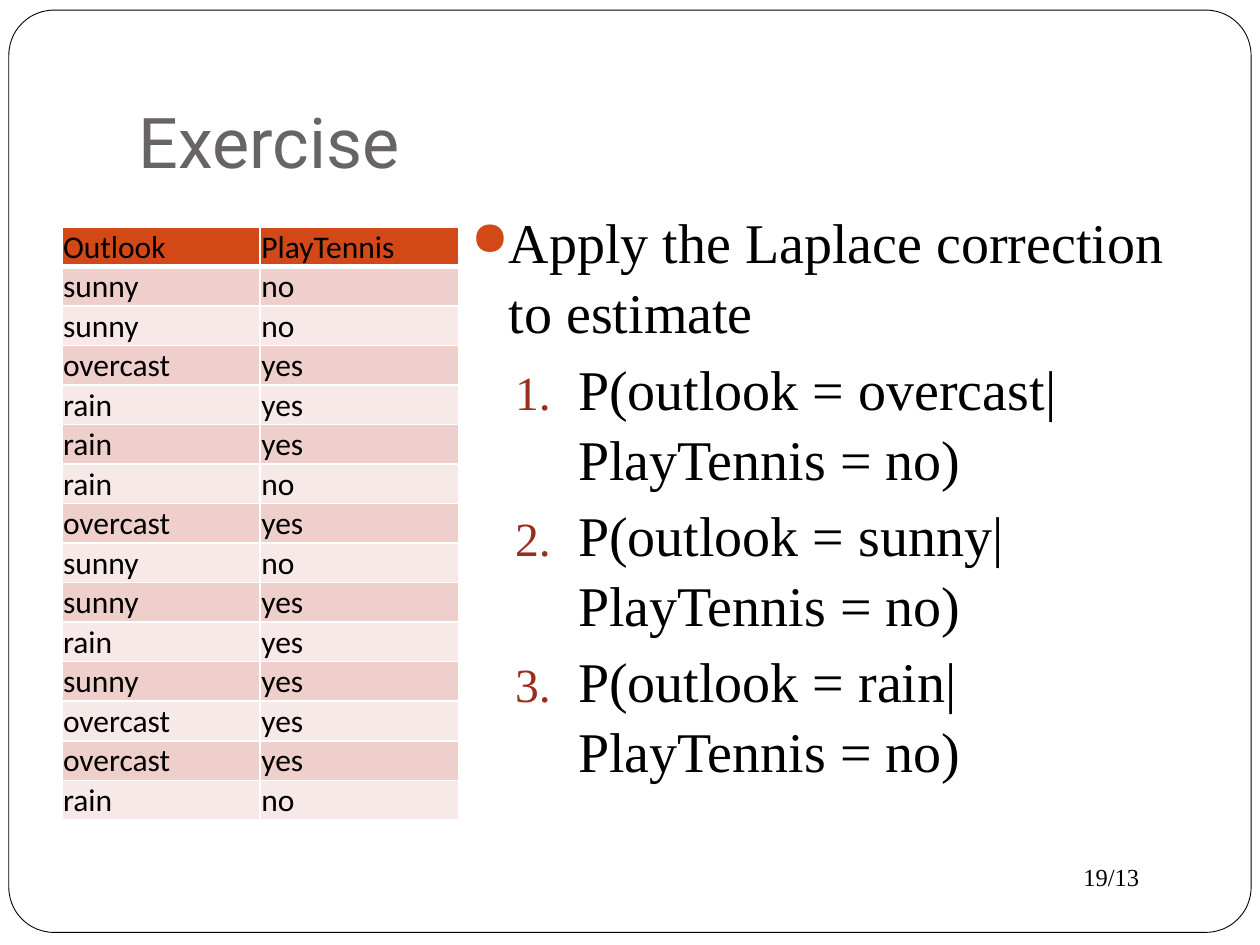
from pptx import Presentation
from pptx.dml.color import RGBColor
from pptx.enum.shapes import MSO_SHAPE
from pptx.enum.text import MSO_ANCHOR, MSO_AUTO_SIZE, PP_ALIGN
from pptx.oxml.ns import qn
from pptx.util import Inches, Pt
from lxml.etree import SubElement

BLACK = RGBColor(0, 0, 0)
WHITE = RGBColor(255, 255, 255)
GRAY = RGBColor(0x69, 0x64, 0x64)
ORANGE = RGBColor(0xD3, 0x48, 0x17)
RED = RGBColor(0x9B, 0x2D, 0x1F)
BANDS = RGBColor(0xF7, 0xE9, 0xE8), RGBColor(0xEF, 0xCF, 0xCC)
SERIF = "Times New Roman"

TITLE = "Exercise"
PAGE_NUMBER = "19/13"
TASK = "Apply the Laplace correction to estimate"
ESTIMATES = [f"P(outlook = {outlook}| PlayTennis = no)" for outlook in ("overcast", "sunny", "rain")]
RECORDS = [
    ("Outlook", "PlayTennis"),
    ("sunny", "no"), ("sunny", "no"), ("overcast", "yes"), ("rain", "yes"),
    ("rain", "yes"), ("rain", "no"), ("overcast", "yes"), ("sunny", "no"),
    ("sunny", "yes"), ("rain", "yes"), ("sunny", "yes"), ("overcast", "yes"),
    ("overcast", "yes"), ("rain", "no"),
]


def write(para, text, font, size, color):
    span = para.add_run()
    span.text = text
    span.font.name, span.font.size = font, Pt(size)
    span.font.color.rgb = color


def add_box(page, left, top, width, height):
    box = page.shapes.add_textbox(Inches(left), Inches(top), Inches(width), Inches(height))
    box.text_frame.word_wrap = True
    return box.text_frame


def set_bullet(para, margin, indent, color, kind, **marker):
    properties = para._p.get_or_add_pPr()
    properties.set("marL", str(Inches(margin)))
    properties.set("indent", str(Inches(indent)))
    tint = SubElement(properties, qn("a:buClr"))
    SubElement(tint, qn("a:srgbClr"), val=str(color))
    SubElement(properties, qn("a:buSzPct"), val="85000")
    SubElement(properties, qn(kind), **marker)


def set_borders(cell, top, bottom):
    properties = cell._tc.get_or_add_tcPr()
    for side, width in (("L", 1), ("R", 1), ("T", top), ("B", bottom)):
        line = SubElement(properties, qn(f"a:ln{side}"), w=str(Pt(width)))
        fill = SubElement(line, qn("a:solidFill"))
        SubElement(fill, qn("a:srgbClr"), val=str(WHITE))


def add_title(page):
    title = page.shapes.title
    title.left, title.top, title.width, title.height = map(Inches, (1, 0.3, 8.5, 1.25))
    frame = title.text_frame
    frame.auto_size = MSO_AUTO_SIZE.NONE
    frame.vertical_anchor = MSO_ANCHOR.BOTTOM
    frame.margin_bottom = Inches(0.1)
    para = frame.paragraphs[0]
    para.alignment = PP_ALIGN.LEFT
    write(para, TITLE, "Roboto", 40, GRAY)


def add_border(page):
    border = page.shapes.add_shape(
        MSO_SHAPE.ROUNDED_RECTANGLE, Inches(0.07), Inches(0.08), Inches(9.86), Inches(7.32))
    border.adjustments[0] = 0.049
    border.shadow.inherit = False
    border.fill.solid()
    border.fill.fore_color.rgb = WHITE
    border.line.color.rgb = BLACK
    border.line.width = Pt(0.5)
    page.shapes.title.element.addprevious(border.element)


def add_tasks(page):
    frame = add_box(page, 3.64, 1.58, 5.86, 4.93)
    for index, text in enumerate([TASK, *ESTIMATES]):
        para = frame.add_paragraph() if index else frame.paragraphs[0]
        para.line_spacing = 1.04
        para.space_before = Pt(3.7 if index else 5.8)
        if index:
            para.level = 1
            set_bullet(para, 0.85, -0.5, RED, "a:buAutoNum", type="arabicPeriod")
        else:
            set_bullet(para, 0.3, -0.3, ORANGE, "a:buChar", char="●")
        write(para, text, SERIF, 32, BLACK)


def add_records(page):
    rows, columns = len(RECORDS), len(RECORDS[0])
    table = page.shapes.add_table(
        rows, columns, Inches(0.49), Inches(1.8), Inches(3.15), Inches(4.71)).table
    for row, record in enumerate(RECORDS):
        for column, text in enumerate(record):
            cell = table.cell(row, column)
            cell.margin_left = cell.margin_right = cell.margin_top = Inches(0.01)
            cell.margin_bottom = 0
            cell.vertical_anchor = MSO_ANCHOR.BOTTOM
            set_borders(cell, 3 if row == 1 else 1, 3 if row == 0 else 1)
            cell.fill.solid()
            cell.fill.fore_color.rgb = BANDS[row % 2] if row else ORANGE
            para = cell.text_frame.paragraphs[0]
            write(para, text, "Calibri", 18, BLACK)
            para.runs[0].font.bold = False


def main():
    deck = Presentation()
    deck.slide_width, deck.slide_height = Inches(10), Inches(7.5)
    page = deck.slides.add_slide(deck.slide_layouts[5])
    add_title(page)
    add_border(page)
    number = add_box(page, 8.5, 6.79, 1, 0.34)
    write(number.paragraphs[0], PAGE_NUMBER, SERIF, 14, BLACK)
    add_tasks(page)
    add_records(page)
    deck.save("out.pptx")


if __name__ == "__main__":
    main()
